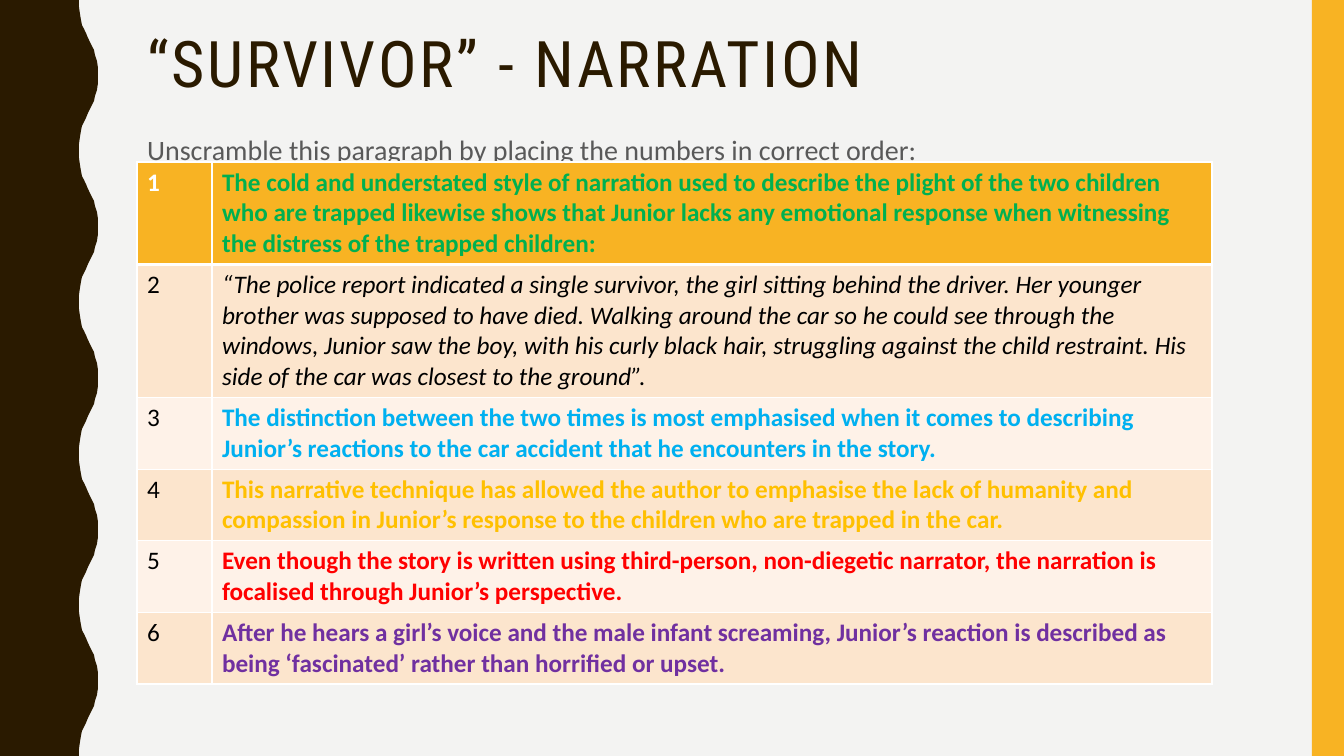
from lxml import etree
from pptx import Presentation
from pptx import util as u
from pptx.dml.color import RGBColor
from pptx.enum import shapes, text
from pptx.oxml.ns import qn

SCALE = 914400 / 100.8
WIDTH, HEIGHT = 1344, 756
WAVES = 5
HALF_WAVE = [(79, 0), (79, 7), (80, 14), (81, 20), (82, 25), (84, 29), (86, 33), (88, 38),
             (90, 42), (92, 46), (94, 50), (95, 55), (97, 61), (98, 68), (98, 76)]
COLOURS = {
    "paper": "F3F3F2", "bark": "2A1A00", "amber": "F8B323", "grey": "595959",
    "white": "FFFFFF", "black": "000000", "peach": "FCE5CD", "cream": "FEF2E8",
    "green": "00B050", "sky": "00B0F0", "gold": "FFC000", "red": "FF0000", "purple": "7030A0",
}
TITLE = "“SURVIVOR” - NARRATION"
INSTRUCTION = "Unscramble this paragraph by placing the numbers in correct order:"
SENTENCES = [
    ("The cold and understated style of narration used to describe the plight of the two children "
     "who are trapped likewise shows that Junior lacks any emotional response when witnessing "
     "the distress of the trapped children:", "green", {"bold": True}),
    ("“The police report indicated a single survivor, the girl sitting behind the driver. Her younger "
     "brother was supposed to have died. Walking around the car so he could see through the "
     "windows, Junior saw the boy, with his curly black hair, struggling against the child restraint. "
     "His side of the car was closest to the ground”.", "black", {"bold": False, "italic": True}),
    ("The distinction between the two times is most emphasised when it comes to describing "
     "Junior’s reactions to the car accident that he encounters in the story.",
     "sky", {"bold": True}),
    ("This narrative technique has allowed the author to emphasise the lack of humanity and "
     "compassion in Junior’s response to the children who are trapped in the car.",
     "gold", {"bold": True}),
    ("Even though the story is written using third-person, non-diegetic narrator, the narration is "
     "focalised through Junior’s perspective.", "red", {"bold": True}),
    ("After he hears a girl’s voice and the male infant screaming, Junior’s reaction is described as "
     "being ‘fascinated’ rather than horrified or upset.", "purple", {"bold": True}),
]


def px(length):
    return u.Emu(round(length * SCALE))


def colour(name):
    return RGBColor.from_string(COLOURS[name])


def assign(target, values):
    for name, value in values.items():
        setattr(target, name, value)


class NarrationSlide:
    heading = {"name": "Roboto Condensed", "size": u.Pt(45.9)}
    lead = {"name": "Calibri", "size": u.Pt(20)}
    cell_text = {"name": "Calibri", "size": u.Pt(18)}

    def __init__(self, deck):
        self.slide = deck.slides.add_slide(deck.slide_layouts[1])
        self.paint(self.slide.background, "paper")

    def paint(self, part, fill):
        part.fill.solid()
        part.fill.fore_color.rgb = colour(fill)

    def decorate(self, shape, fill):
        self.paint(shape, fill)
        shape.line.fill.background()
        shape.shadow.inherit = False

    def band(self, left, top, width, height, fill):
        band = self.slide.shapes.add_shape(
            shapes.MSO_SHAPE.RECTANGLE, *map(px, (left, top, width, height)))
        self.decorate(band, fill)

    def wavy_edge(self, fill):
        period = HEIGHT / WAVES
        wave = HALF_WAVE + [(x, period - y) for x, y in HALF_WAVE[-2::-1]]
        outline = [(x, n * period + y) for n in range(WAVES) for x, y in wave]
        builder = self.slide.shapes.build_freeform(0, 0, scale=SCALE)
        builder.add_line_segments(outline + [(0, HEIGHT)], close=True)
        self.decorate(builder.convert_to_shape(), fill)

    def add_words(self, paragraph, words, ink, style):
        run = paragraph.add_run()
        run.text = words
        assign(run.font, style)
        run.font.color.rgb = colour(ink)
        return run

    def placeholder(self, holder, box, words, ink, style, anchor, spacing):
        assign(holder, dict(zip(("left", "top", "width", "height"), map(px, box))))
        assign(holder.text_frame, {"word_wrap": True, "vertical_anchor": anchor,
                                   "auto_size": text.MSO_AUTO_SIZE.NONE})
        paragraph = holder.text_frame.paragraphs[0]
        assign(paragraph, {"alignment": text.PP_ALIGN.LEFT, "line_spacing": spacing,
                           "space_before": u.Pt(0)})
        return paragraph, self.add_words(paragraph, words, ink, style)

    def title(self, box, words):
        _, run = self.placeholder(self.slide.shapes.title, box, words, "bark", self.heading,
                                  text.MSO_ANCHOR.MIDDLE, 0.9)
        run.font._element.set("spc", "200")

    def body(self, box, words):
        paragraph, _ = self.placeholder(self.slide.placeholders[1], box, words, "grey", self.lead,
                                        text.MSO_ANCHOR.TOP, 1.1)
        paragraph.space_before = u.Pt(7)
        properties = paragraph._p.get_or_add_pPr()
        properties.set("marL", "0")
        properties.set("indent", "0")
        etree.SubElement(properties, qn("a:buNone"))

    def cell(self, cell, words, ink, style, fill, bottom):
        properties = cell._tc.get_or_add_tcPr()
        for side, points in (("L", 1), ("R", 1), ("T", 1), ("B", bottom)):
            border = etree.SubElement(properties, qn("a:ln" + side), w=str(u.Pt(points)))
            solid = etree.SubElement(border, qn("a:solidFill"))
            etree.SubElement(solid, qn("a:srgbClr"), val=COLOURS["white"])
        self.paint(cell, fill)
        self.add_words(cell.text_frame.paragraphs[0], words, ink, {**self.cell_text, **style})

    def sentence_table(self, box, column_widths, row_height, sentences):
        frame = self.slide.shapes.add_table(
            len(sentences), len(column_widths), *map(px, box))
        table = frame.table
        for column, width in zip(table.columns, column_widths):
            column.width = px(width)
        for index, (sentence, ink, style) in enumerate(sentences):
            header = index == 0
            fill = "amber" if header else ("cream", "peach")[index % 2]
            bottom = 3 if header else 1
            table.rows[index].height = px(row_height)
            self.cell(table.cell(index, 0), str(index + 1), "white" if header else "black",
                      {"bold": header}, fill, bottom)
            self.cell(table.cell(index, 1), sentence, ink, style, fill, bottom)
        frame.height = px(box[3])


def main():
    deck = Presentation()
    assign(deck, {"slide_width": px(WIDTH), "slide_height": px(HEIGHT)})
    narration = NarrationSlide(deck)
    narration.wavy_edge("bark")
    narration.band(1312, 0, 32, HEIGHT, "amber")
    narration.title((137, 23, 1122, 87), TITLE)
    narration.body((137, 124, 1122, 632), INSTRUCTION)
    narration.sentence_table((137, 162, 1075, 514), (75, 1000), 58, SENTENCES)
    deck.save("out.pptx")


if __name__ == "__main__":
    main()
